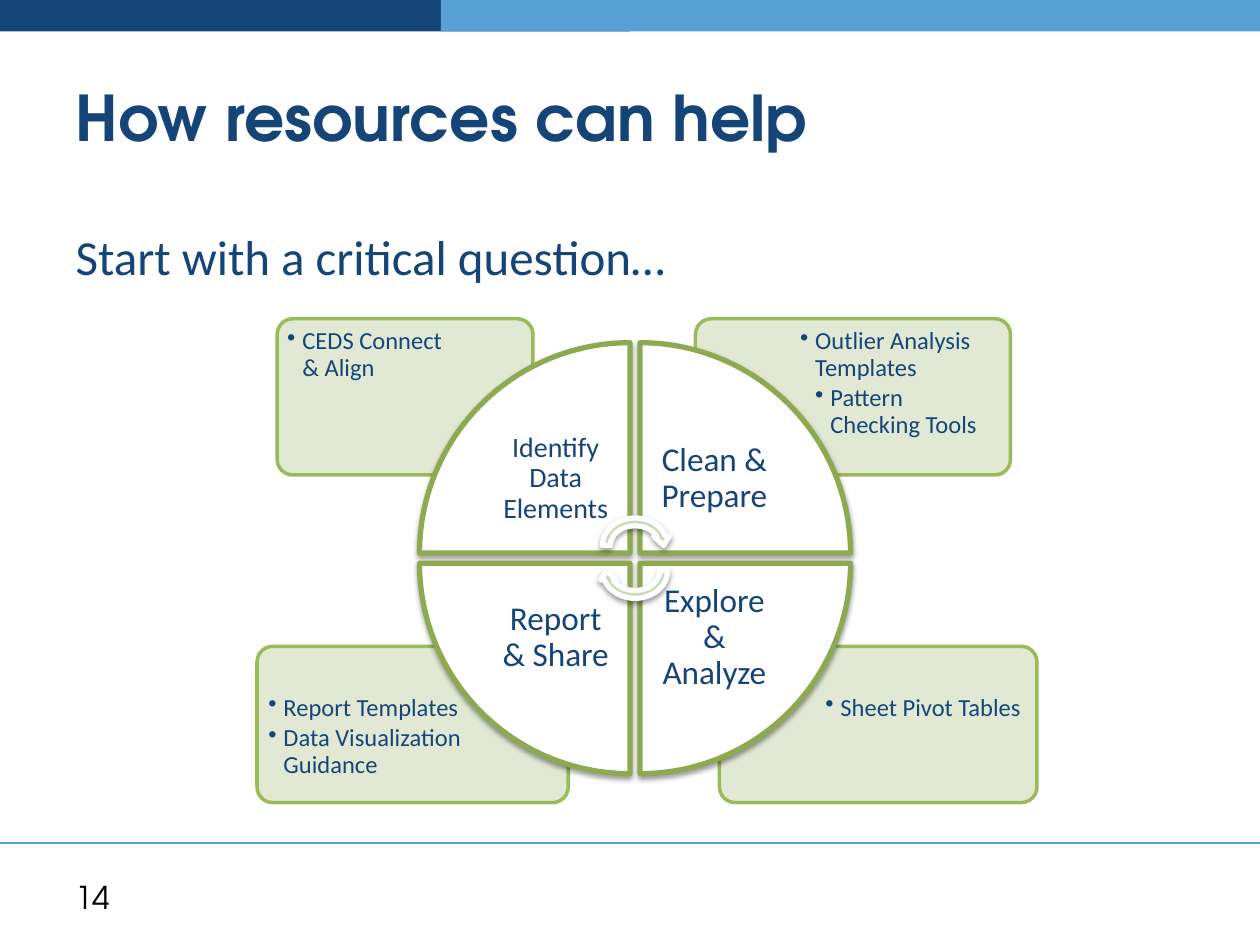
"""Build a slide showing how resources support the four stages of a data cycle."""
from dataclasses import dataclass

import lxml.etree
import pptx
import pptx.dml.color
import pptx.enum.shapes
import pptx.enum.text
import pptx.oxml.ns
import pptx.util

Inches = pptx.util.Inches
Pt = pptx.util.Pt
RGBColor = pptx.dml.color.RGBColor
Shapes = pptx.enum.shapes.MSO_SHAPE
Align = pptx.enum.text.PP_ALIGN
Anchor = pptx.enum.text.MSO_ANCHOR
qn = pptx.oxml.ns.qn

NAVY = RGBColor(0x15, 0x45, 0x78)
SKY = RGBColor(0x56, 0xA0, 0xD3)
BLACK = RGBColor(0, 0, 0)
WHITE = RGBColor(0xFF, 0xFF, 0xFF)
CARD_FILL = RGBColor(0xDE, 0xE7, 0xD1)
CARD_LINE = RGBColor(0x9B, 0xBB, 0x59)
WEDGE_LINE = RGBColor(0x8D, 0xAA, 0x51)
ARROW_FILL = RGBColor(0xCB, 0xDA, 0xB5)
HEADING_FONT = "TeX Gyre Adventor"
BODY_FONT = "Calibri"

CARD_HEIGHT = 1.24
CARD_TEXT_HEIGHT = 0.87
WEDGE_SIZE = 1.67
LABEL_SIZE = 1.18
WEDGE_LEFTS = (3.33, 5.08)
WEDGE_TOPS = (2.72, 4.47)


@dataclass
class Card:
    left: float
    top: float
    width: float
    text_left: float
    text_top: float
    text_width: float
    bullets: tuple[tuple[str, int], ...]


@dataclass
class Stage:
    label: str
    column: int
    row: int
    rotation: int
    size: int = 19
    inset: float = 0.15


CARDS = (
    Card(5.71, 5.13, 2.52, 6.49, 5.46, 1.71, (("Sheet Pivot Tables", 1),)),
    Card(2.04, 5.13, 2.47, 2.07, 5.46, 1.67,
         (("Report Templates", 1), ("Data Visualization Guidance", 1))),
    Card(5.52, 2.53, 2.5, 6.29, 2.55, 1.69,
         (("Outlier Analysis Templates", 1), ("Pattern Checking Tools", 2))),
    Card(2.2, 2.53, 2.03, 2.22, 2.55, 1.36, (("CEDS Connect & Align", 1),)),
)
STAGES = (
    Stage("Identify Data Elements", 0, 0, 0, 16, 0.12),
    Stage("Clean & Prepare", 1, 0, 90),
    Stage("Explore & Analyze", 1, 1, 180),
    Stage("Report & Share", 0, 1, 270),
)


def place(shape, left: float, top: float, width: float, height: float) -> None:
    """Move and size a shape, in inches."""
    shape.left, shape.top = Inches(left), Inches(top)
    shape.width, shape.height = Inches(width), Inches(height)


def format_runs(paragraph, font: str, size: float, color: RGBColor, bold: bool = False) -> None:
    """Apply one font to every run of a paragraph."""
    for run in paragraph.runs:
        run.font.name, run.font.size, run.font.bold = font, Pt(size), bold
        run.font.color.rgb = color


def add_shape(slide, kind, box: tuple, fill: RGBColor, line: RGBColor | None = None,
              line_width: float = 0, rotation: int = 0):
    """Add a flat preset shape with a solid fill and an optional outline."""
    shape = slide.shapes.add_shape(kind, *map(Inches, box))
    shape.rotation = rotation
    shape.shadow.inherit = False
    shape.fill.solid()
    shape.fill.fore_color.rgb = fill
    if line is None:
        shape.line.fill.background()
    else:
        shape.line.color.rgb = line
        shape.line.width = Pt(line_width)
    return shape


def add_soft_shadow(shape) -> None:
    """Give a shape a soft shadow that falls straight down."""
    effects = shape._element.spPr.find(qn("a:effectLst"))
    shadow = lxml.etree.SubElement(
        effects, qn("a:outerShdw"), blurRad=str(Pt(3.1)), dist=str(Pt(1.6)),
        dir="5400000", rotWithShape="0")
    color = lxml.etree.SubElement(shadow, qn("a:srgbClr"), val=str(BLACK))
    lxml.etree.SubElement(color, qn("a:alpha"), val="38000")


def add_text_box(slide, box: tuple, inset: float, anchor=Anchor.TOP):
    """Add a wrapping text box and return its text frame."""
    frame = slide.shapes.add_textbox(*map(Inches, box)).text_frame
    frame.word_wrap = True
    frame.vertical_anchor = anchor
    frame.margin_left = frame.margin_right = Inches(inset)
    frame.margin_top = frame.margin_bottom = Inches(inset)
    return frame


def set_bullet(paragraph, indent: float, hanging: float, character: str = "") -> None:
    """Set the indents and the bullet, or no bullet, of a paragraph."""
    properties = paragraph._p.get_or_add_pPr()
    properties.set("marL", str(Inches(indent)))
    properties.set("indent", str(Inches(-hanging)))
    if character:
        lxml.etree.SubElement(properties, qn("a:buChar"), char=character)
    else:
        lxml.etree.SubElement(properties, qn("a:buNone"))


def add_card(slide, card: Card) -> None:
    """Draw a resource card and its bulleted list."""
    shape = add_shape(slide, Shapes.ROUNDED_RECTANGLE,
                      (card.left, card.top, card.width, CARD_HEIGHT), CARD_FILL, CARD_LINE, 2)
    shape.adjustments[0] = 0.1
    color = shape._element.spPr.find(qn("a:solidFill")).find(qn("a:srgbClr"))
    lxml.etree.SubElement(color, qn("a:alpha"), val="90000")
    frame = add_text_box(
        slide, (card.text_left, card.text_top, card.text_width, CARD_TEXT_HEIGHT), 0.06)
    frame.text = "\n".join(text for text, level in card.bullets)
    for paragraph, (text, level) in zip(frame.paragraphs, card.bullets):
        paragraph.level = level
        set_bullet(paragraph, 0.12 * level, 0.12, "•")
        paragraph.line_spacing = 0.9
        paragraph.space_after = Pt(2.1)
        format_runs(paragraph, BODY_FONT, 14, NAVY)


def add_stage(slide, stage: Stage) -> None:
    """Draw a quarter of the cycle with its label against the centre."""
    left, top = WEDGE_LEFTS[stage.column], WEDGE_TOPS[stage.row]
    wedge = add_shape(slide, Shapes.PIE_WEDGE, (left, top, WEDGE_SIZE, WEDGE_SIZE),
                      WHITE, WEDGE_LINE, 3, stage.rotation)
    add_soft_shadow(wedge)
    offset = WEDGE_SIZE - LABEL_SIZE
    box = (left + offset * (1 - stage.column), top + offset * (1 - stage.row),
           LABEL_SIZE, LABEL_SIZE)
    frame = add_text_box(slide, box, stage.inset, Anchor.MIDDLE)
    frame.text = stage.label
    paragraph = frame.paragraphs[0]
    paragraph.alignment = Align.CENTER
    paragraph.line_spacing = 0.9
    format_runs(paragraph, BODY_FONT, stage.size, NAVY)


def add_frame(slide) -> None:
    """Draw the top bands, the footer rule and the slide number."""
    add_shape(slide, Shapes.RECTANGLE, (0, -1.25, 5, 1.5), NAVY)
    add_shape(slide, Shapes.RECTANGLE, (3.5, -1.25, 6.5, 1.5), SKY)
    rule = slide.shapes.add_connector(
        pptx.enum.shapes.MSO_CONNECTOR.STRAIGHT, 0, Inches(6.69), Inches(10), Inches(6.69))
    rule.line.color.rgb = SKY
    rule.line.width = Pt(1.5)
    lxml.etree.SubElement(rule._element.spPr, qn("a:effectLst"))
    number = add_text_box(slide, (0.5, 6.92, 2.33, 0.4), 0.1, Anchor.MIDDLE)
    number.text = "14"
    format_runs(number.paragraphs[0], HEADING_FONT, 18, BLACK)


def main() -> None:
    """Build and save the presentation."""
    presentation = pptx.Presentation()
    presentation.slide_width, presentation.slide_height = Inches(10), Inches(7.5)
    slide = presentation.slides.add_slide(presentation.slide_layouts[1])
    add_frame(slide)

    title, body = slide.placeholders
    place(title, 0.5, 0.3, 9, 1.25)
    title.text_frame.text = "How resources can help"
    title.text_frame.vertical_anchor = Anchor.MIDDLE
    title.text_frame.paragraphs[0].alignment = Align.LEFT
    format_runs(title.text_frame.paragraphs[0], HEADING_FONT, 36, NAVY, True)
    place(body, 0.5, 1.75, 9, 4.92)
    body.text_frame.text = "Start with a critical question…"
    question = body.text_frame.paragraphs[0]
    set_bullet(question, 0, 0)
    question.space_before = Pt(0)
    format_runs(question, BODY_FONT, 28, NAVY)

    for card in CARDS:
        add_card(slide, card)
    for stage in STAGES:
        add_stage(slide, stage)
    for top, rotation in ((4.08, 0), (4.28, 180)):
        add_soft_shadow(add_shape(slide, Shapes.CIRCULAR_ARROW, (4.75, top, 0.58, 0.5),
                                  ARROW_FILL, WHITE, 3, rotation))
    presentation.save("out.pptx")


if __name__ == "__main__":
    main()
